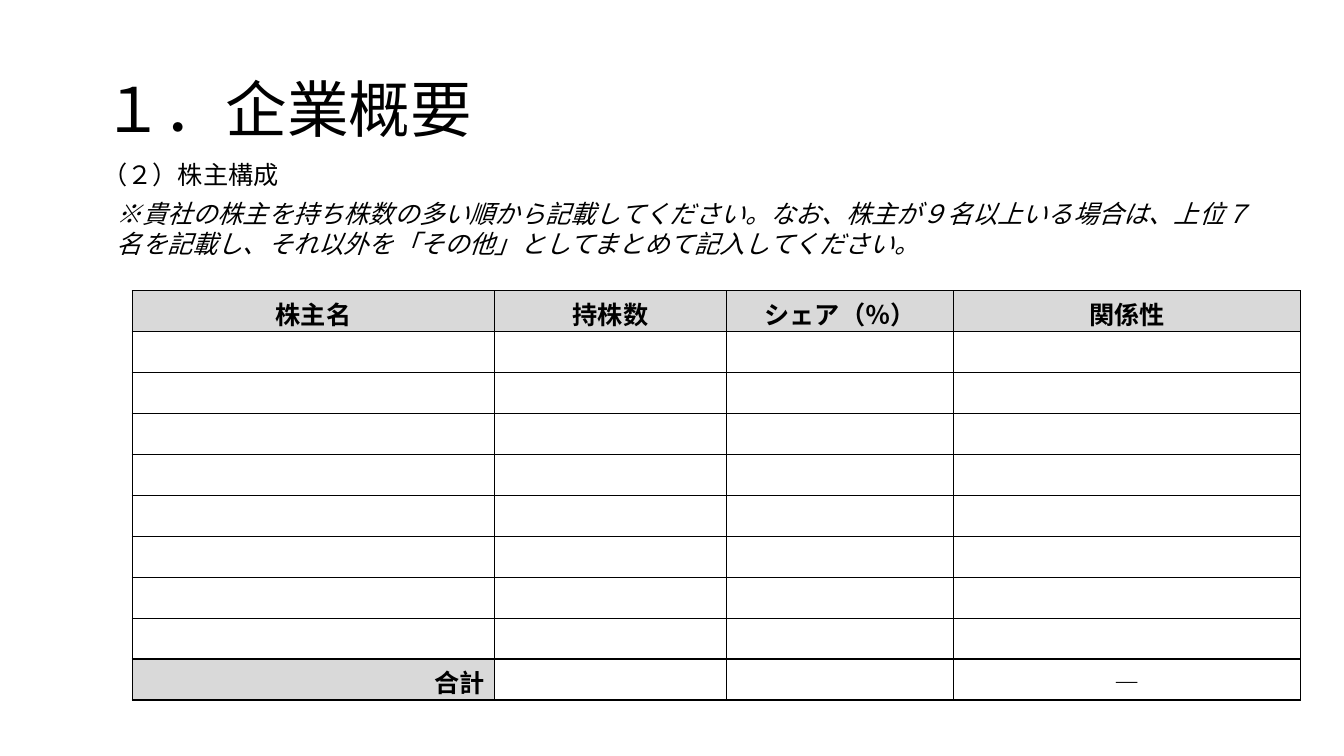
from dataclasses import dataclass, field
from typing import Any

import pptx
import pptx.dml.color
import pptx.enum.text
import pptx.oxml
import pptx.oxml.ns
import pptx.util

ALIGN = pptx.enum.text.PP_ALIGN
ANCHOR = pptx.enum.text.MSO_ANCHOR


def px(length: int) -> pptx.util.Emu:
    return pptx.util.Emu(length * 9525)


@dataclass(frozen=True)
class Theme:
    font: str = "Noto Sans CJK JP"
    ink: str = "000000"
    shade: str = "D9D9D9"
    title_size: int = 44
    body_size: int = 18
    body_leading: float = 21.5
    border: int = 1


THEME = Theme()
BODY_LEADING = pptx.util.Pt(THEME.body_leading)


@dataclass(frozen=True)
class TextBlock:
    text: str
    left: int
    top: int
    height: int
    size: int
    spacing: Any
    width: int = 1104
    frame_format: dict[str, Any] = field(default_factory=dict)
    font_format: dict[str, Any] = field(default_factory=dict)


@dataclass(frozen=True)
class CellText:
    row: int
    column: int
    text: str
    alignment: Any = ALIGN.CENTER
    bold: bool = True
    shaded: bool = True


BODY_FRAME = {"margin_top": px(7), "vertical_anchor": ANCHOR.TOP}
BLOCKS = [
    TextBlock("１．企業概要", 88, 38, 139, THEME.title_size, 0.9,
              frame_format={"vertical_anchor": ANCHOR.MIDDLE}),
    TextBlock("※貴社の株主を持ち株数の多い順から記載してください。なお、株主が９名以上いる場合は、"
              "上位７名を記載し、それ以外を「その他」としてまとめて記入してください。",
              102, 182, 68, THEME.body_size, BODY_LEADING,
              frame_format=BODY_FRAME, font_format={"italic": True}),
    TextBlock("（２）株主構成", 88, 145, 38, THEME.body_size, BODY_LEADING,
              frame_format=BODY_FRAME),
]

TABLE_LEFT, TABLE_TOP = 126, 277
COLUMN_WIDTHS = [345, 221, 216, 331]
ROW_COUNT, ROW_HEIGHT = 10, 39
HEADINGS = ["株主名", "持株数", "シェア（％）", "関係性"]
CELL_TEXTS = [CellText(0, column, text) for column, text in enumerate(HEADINGS)] + [
    CellText(ROW_COUNT - 1, 0, "合計", ALIGN.RIGHT),
    CellText(ROW_COUNT - 1, 3, "―", bold=False, shaded=False),
]


def apply_format(target: Any, values: dict[str, Any]) -> None:
    for name, value in values.items():
        setattr(target, name, value)


def add_span(para: Any, text: str, size: int, font_format: dict[str, Any]) -> None:
    span = para.add_run()
    span.text = text
    apply_format(span.font, {"name": THEME.font, "size": pptx.util.Pt(size), **font_format})
    span.font.color.rgb = pptx.dml.color.RGBColor.from_string(THEME.ink)
    east_asian = pptx.oxml.parse_xml(
        f'<a:ea {pptx.oxml.ns.nsdecls("a")} typeface="{THEME.font}"/>')
    span.font._element.find(pptx.oxml.ns.qn("a:latin")).addnext(east_asian)


def draw_block(page: Any, block: TextBlock) -> None:
    box = page.shapes.add_textbox(
        px(block.left), px(block.top), px(block.width), px(block.height))
    apply_format(box.text_frame, {"word_wrap": True, **block.frame_format})
    para = box.text_frame.paragraphs[0]
    para.line_spacing = block.spacing
    add_span(para, block.text, block.size, block.font_format)


def draw_borders(cell: Any) -> None:
    properties = cell._tc.get_or_add_tcPr()
    for position, side in enumerate(("lnL", "lnR", "lnT", "lnB")):
        border = pptx.oxml.parse_xml(
            f'<a:{side} {pptx.oxml.ns.nsdecls("a")} w="{pptx.util.Pt(THEME.border)}">'
            f'<a:solidFill><a:srgbClr val="{THEME.ink}"/></a:solidFill></a:{side}>')
        properties.insert(position, border)


def draw_table(page: Any) -> None:
    table = page.shapes.add_table(
        ROW_COUNT, len(COLUMN_WIDTHS), px(TABLE_LEFT), px(TABLE_TOP),
        px(sum(COLUMN_WIDTHS)), px(ROW_COUNT * ROW_HEIGHT)).table
    apply_format(table, {"first_row": False, "horz_banding": False})
    for column, width in zip(table.columns, COLUMN_WIDTHS):
        column.width = px(width)
    for row in table.rows:
        row.height = px(ROW_HEIGHT)
    for cell in table.iter_cells():
        apply_format(cell, {"margin_top": px(4), "margin_bottom": px(0)})
        cell.fill.background()
        draw_borders(cell)
    for entry in CELL_TEXTS:
        cell = table.cell(entry.row, entry.column)
        para = cell.text_frame.paragraphs[0]
        para.alignment = entry.alignment
        add_span(para, entry.text, THEME.body_size, {"bold": entry.bold})
        if entry.shaded:
            cell.fill.solid()
            cell.fill.fore_color.rgb = pptx.dml.color.RGBColor.from_string(THEME.shade)


def main() -> None:
    deck = pptx.Presentation()
    apply_format(deck, {"slide_width": px(1280), "slide_height": px(720)})
    page = deck.slides.add_slide(deck.slide_layouts[6])
    for block in BLOCKS:
        draw_block(page, block)
    draw_table(page)
    deck.save("out.pptx")


if __name__ == "__main__":
    main()
